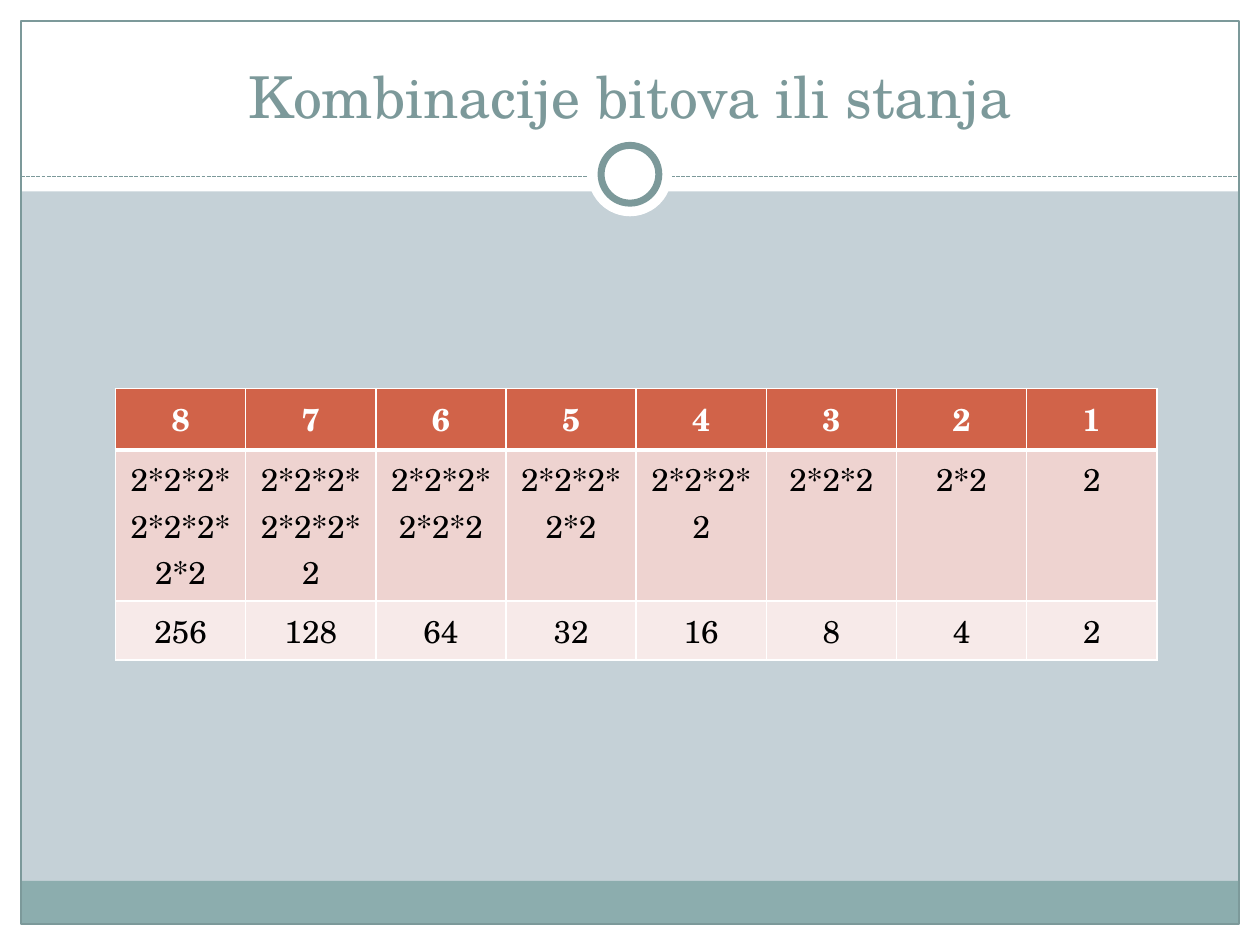
from lxml.etree import SubElement
from pptx import Presentation
from pptx.dml.color import RGBColor
from pptx.enum.dml import MSO_LINE
from pptx.enum.shapes import MSO_CONNECTOR, MSO_SHAPE as SHAPE
from pptx.enum.text import MSO_ANCHOR as ANCHOR, MSO_AUTO_SIZE as AUTO, PP_ALIGN as ALIGN
from pptx.oxml import parse_xml
from pptx.oxml.ns import nsdecls, qn
from pptx.util import Inches, Pt

COLORS = {
    "white": "FFFFFF", "black": "000000", "ground": "C5D1D7",
    "teal": "7C999A", "band": "8CADAE", "header": "D16349",
    "product": "EED3D0", "total": "F7EAE9",
}
FONT = "TeX Gyre Schola"
COLUMNS, ROWS = 120, 90


def color(name):
    return RGBColor.from_string(COLORS[name])


def write(frame, text, size=18, ink="black", bold=False, align=ALIGN.CENTER):
    line = frame.paragraphs[0]
    line.alignment = align
    run = line.add_run()
    run.text = text
    run.font.name, run.font.size, run.font.bold = FONT, Pt(size), bold
    run.font.color.rgb = color(ink)


class Canvas:
    """Draws the elements of one slide on a grid of 120 columns and 90 rows."""

    def __init__(self, deck):
        self.width, self.height = deck.slide_width, deck.slide_height
        self.slide = deck.slides.add_slide(deck.slide_layouts[5])
        ground = self.slide.background.fill
        ground.solid()
        ground.fore_color.rgb = color("ground")

    def box(self, left, top, width, height):
        return (int(left * self.width / COLUMNS), int(top * self.height / ROWS),
                int(width * self.width / COLUMNS), int(height * self.height / ROWS))

    def shape(self, kind, area, fill=None, line=None, weight=0.75):
        item = self.slide.shapes.add_shape(kind, *self.box(*area))
        item.shadow.inherit = False
        if fill:
            item.fill.solid()
            item.fill.fore_color.rgb = color(fill)
        else:
            item.fill.background()
        if line:
            item.line.color.rgb = color(line)
            item.line.width = Pt(weight)
        else:
            item.line.fill.background()

    def dashes(self, left, right, level):
        x, y, width, _ = self.box(left, level, right - left, 0)
        rule = self.slide.shapes.add_connector(MSO_CONNECTOR.STRAIGHT, x, y, x + width, y)
        rule.line.color.rgb = color("teal")
        rule.line.width = Pt(0.75)
        rule.line.dash_style = MSO_LINE.SQUARE_DOT
        SubElement(rule._element.spPr, qn("a:effectLst"))

    def title(self, text, area):
        heading = self.slide.shapes.title
        heading.left, heading.top, heading.width, heading.height = self.box(*area)
        frame = heading.text_frame
        frame.auto_size, frame.word_wrap = AUTO.NONE, True
        frame.vertical_anchor = ANCHOR.BOTTOM
        write(frame, text, size=33, ink="teal")
        self.slide.shapes._spTree.append(heading._element)

    def borders(self, cell, **weights):
        props = cell._tc.get_or_add_tcPr()
        for place, side in enumerate("LRTB"):
            props.insert(place, parse_xml(
                f'<a:ln{side} {nsdecls("a")} w="{Pt(weights.get(side, 1))}"><a:solidFill>'
                f'<a:srgbClr val="{COLORS["white"]}"/></a:solidFill></a:ln{side}>'))

    def table(self, rows, area, fills):
        grid = self.slide.shapes.add_table(len(rows), len(rows[0]), *self.box(*area)).table
        for r, (values, fill) in enumerate(zip(rows, fills)):
            header = r == 0
            edges = ({"B": 3}, {"T": 3}, {})[min(r, 2)]
            for c, value in enumerate(values):
                cell = grid.cell(r, c)
                cell.fill.solid()
                cell.fill.fore_color.rgb = color(fill)
                self.borders(cell, **edges)
                write(cell.text_frame, value, ink="white" if header else "black", bold=header)


def main():
    deck = Presentation()
    deck.slide_width, deck.slide_height = Inches(10), Inches(7.5)
    canvas = Canvas(deck)

    for margin in ((0, 88, 120, 2), (0, 0, 120, 18.24), (0, 0, 2, 90), (118, 0, 2, 90)):
        canvas.shape(SHAPE.RECTANGLE, margin, fill="white")
    canvas.shape(SHAPE.RECTANGLE, (2, 83.9, 116, 4.1), fill="band")
    canvas.shape(SHAPE.RECTANGLE, (2, 2, 116, 86), line="teal")
    canvas.dashes(2, 118, 16.8)
    canvas.shape(SHAPE.OVAL, (56, 12.6, 8, 8), fill="white")
    canvas.shape(SHAPE.OVAL, (57.25, 13.85, 5.5, 5.5), fill="white", line="teal", weight=4)
    canvas.title("Kombinacije bitova ili stanja", (4, 3, 112, 10))

    bits = range(8, 0, -1)
    states = [[str(n) for n in bits],
              ["*".join("2" * n) for n in bits],
              [str(2 ** n) for n in bits]]
    canvas.table(states, (11, 37, 99.2, 14.6), ("header", "product", "total"))
    deck.save("out.pptx")


if __name__ == "__main__":
    main()
